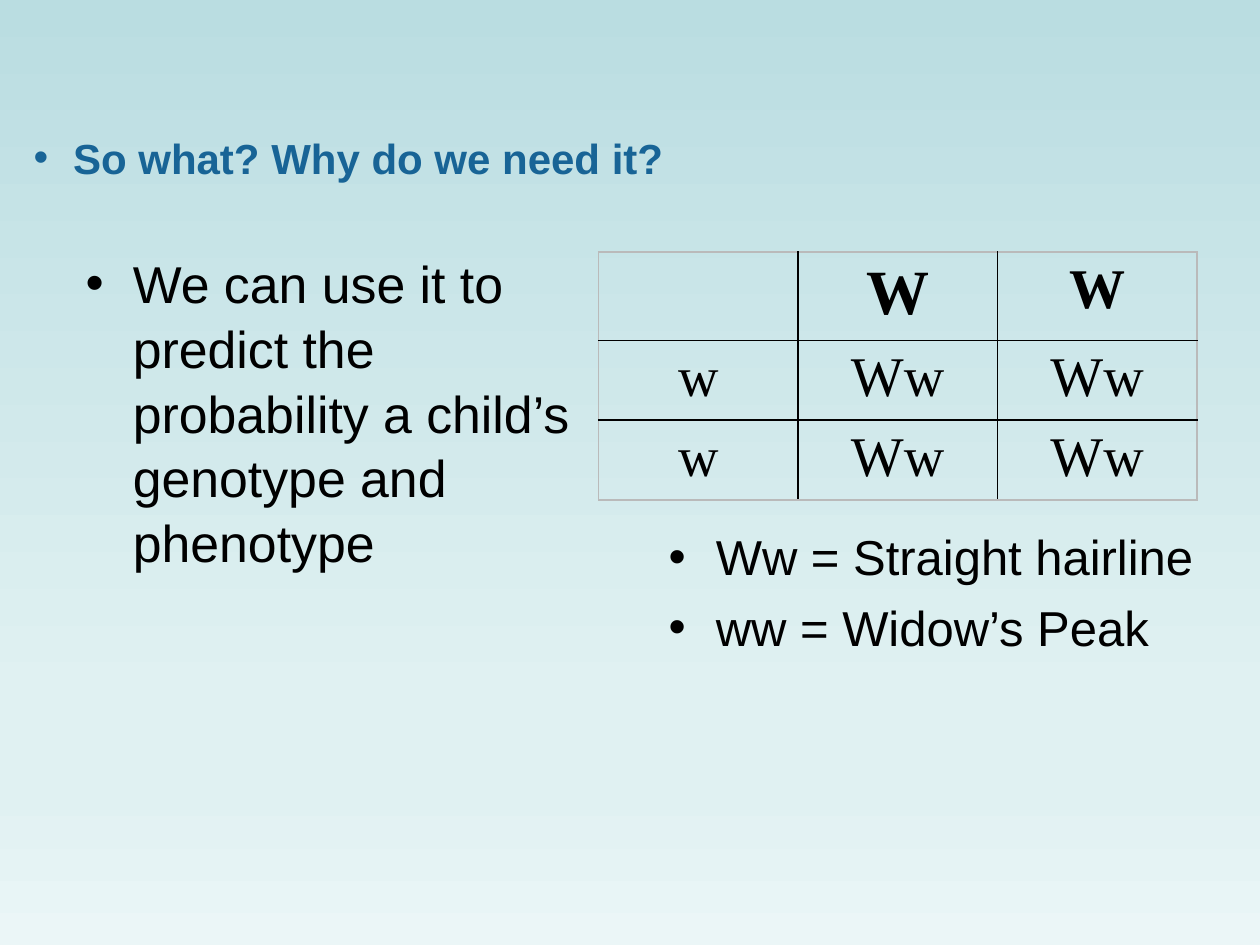
from lxml.etree import SubElement
from pptx import Presentation
from pptx.dml.color import RGBColor
from pptx.enum.text import MSO_ANCHOR as Anchor, PP_ALIGN as Align
from pptx.oxml.ns import qn
from pptx.util import Pt

COLORS = {
    "sky": "BADDE1",
    "mist": "E0F1F2",
    "pale": "EBF6F7",
    "heading": "186496",
    "ink": "000000",
    "frame": "BABABA",
}
BACKDROP = [(0, "sky"), (74, "mist"), (83, "mist"), (100, "pale")]
PUNNETT = [["", "W", "W"], ["w", "Ww", "Ww"], ["w", "Ww", "Ww"]]
COLUMN_WIDTH = 114
ROW_HEIGHTS = [47, 45.6, 45.6]


def paint_backdrop(slide):
    fill = slide.background.fill
    fill.gradient()
    fill.gradient_angle = 270
    stops = next(slide.element.iter(qn("a:gsLst")))
    for stop in list(stops):
        stops.remove(stop)
    for percent, color in BACKDROP:
        stop = SubElement(stops, qn("a:gs"), pos=str(percent * 1000))
        SubElement(stop, qn("a:srgbClr"), val=COLORS[color])


def write(paragraph, text, size=28, font="Arial", color="ink", bold=False,
          align=Align.LEFT, hang=0, before=0, spacing=1.0):
    if hang:
        props = paragraph._p.get_or_add_pPr()
        props.set("marL", str(Pt(hang)))
        props.set("indent", str(-Pt(hang)))
        SubElement(props, qn("a:buFont"), typeface="Arial")
        SubElement(props, qn("a:buChar"), char="•")
    paragraph.alignment = align
    paragraph.space_before = Pt(before)
    paragraph.line_spacing = spacing
    run = paragraph.add_run()
    run.text = text
    run.font.size = Pt(size)
    run.font.name = font
    run.font.bold = bold
    run.font.color.rgb = RGBColor.from_string(COLORS[color])


def add_bullets(slide, lines, left, top, width, height,
                anchor=Anchor.TOP, gap=0, **style):
    frame = slide.shapes.add_textbox(
        Pt(left), Pt(top), Pt(width), Pt(height)).text_frame
    frame.word_wrap = True
    frame.vertical_anchor = anchor
    for index, line in enumerate(lines):
        paragraph = frame.add_paragraph() if index else frame.paragraphs[0]
        write(paragraph, line, before=gap if index else 0, **style)


def rule_cell(cell, outer_sides):
    props = cell._tc.get_or_add_tcPr()
    for index, side in enumerate(("lnL", "lnR", "lnT", "lnB")):
        color = "frame" if side in outer_sides else "ink"
        line = SubElement(props, qn(f"a:{side}"), w=str(Pt(1)))
        solid = SubElement(line, qn("a:solidFill"))
        SubElement(solid, qn("a:srgbClr"), val=COLORS[color])
        props.insert(index, line)


def add_punnett_square(slide, left, top):
    last = len(PUNNETT) - 1
    square = slide.shapes.add_table(
        len(PUNNETT), len(PUNNETT), Pt(left), Pt(top),
        Pt(COLUMN_WIDTH * len(PUNNETT)), Pt(sum(ROW_HEIGHTS))).table
    square.first_row = False
    square.horz_banding = False
    for column in square.columns:
        column.width = Pt(COLUMN_WIDTH)
    for row, alleles in enumerate(PUNNETT):
        square.rows[row].height = Pt(ROW_HEIGHTS[row])
        for col, allele in enumerate(alleles):
            cell = square.cell(row, col)
            cell.fill.background()
            edges = {"lnL": col == 0, "lnR": col == last,
                     "lnT": row == 0, "lnB": row == last}
            rule_cell(cell, [side for side, outer in edges.items() if outer])
            if allele:
                write(cell.text_frame.paragraphs[0], allele,
                      size=36 if (row, col) == (0, 1) else 32,
                      font="Times New Roman", bold=row == 0,
                      align=Align.CENTER)


def main():
    deck = Presentation()
    deck.slide_width, deck.slide_height = Pt(720), Pt(540)
    slide = deck.slides.add_slide(deck.slide_layouts[6])
    paint_backdrop(slide)
    add_bullets(slide, ["So what? Why do we need it?"], 12.2, 72, 684, 36,
                anchor=Anchor.MIDDLE, size=24, color="heading", bold=True,
                hang=22.5)
    add_bullets(slide, ["We can use it to predict the probability a child’s "
                        "genotype and phenotype"],
                41.8, 139, 321, 157, size=29.6, hang=27, spacing=1.04)
    add_bullets(slide, ["Ww = Straight hairline", "ww = Widow’s Peak"],
                375, 297.4, 321, 85, hang=27, gap=6.7)
    add_punnett_square(slide, 342, 144)
    deck.save("out.pptx")


if __name__ == "__main__":
    main()
